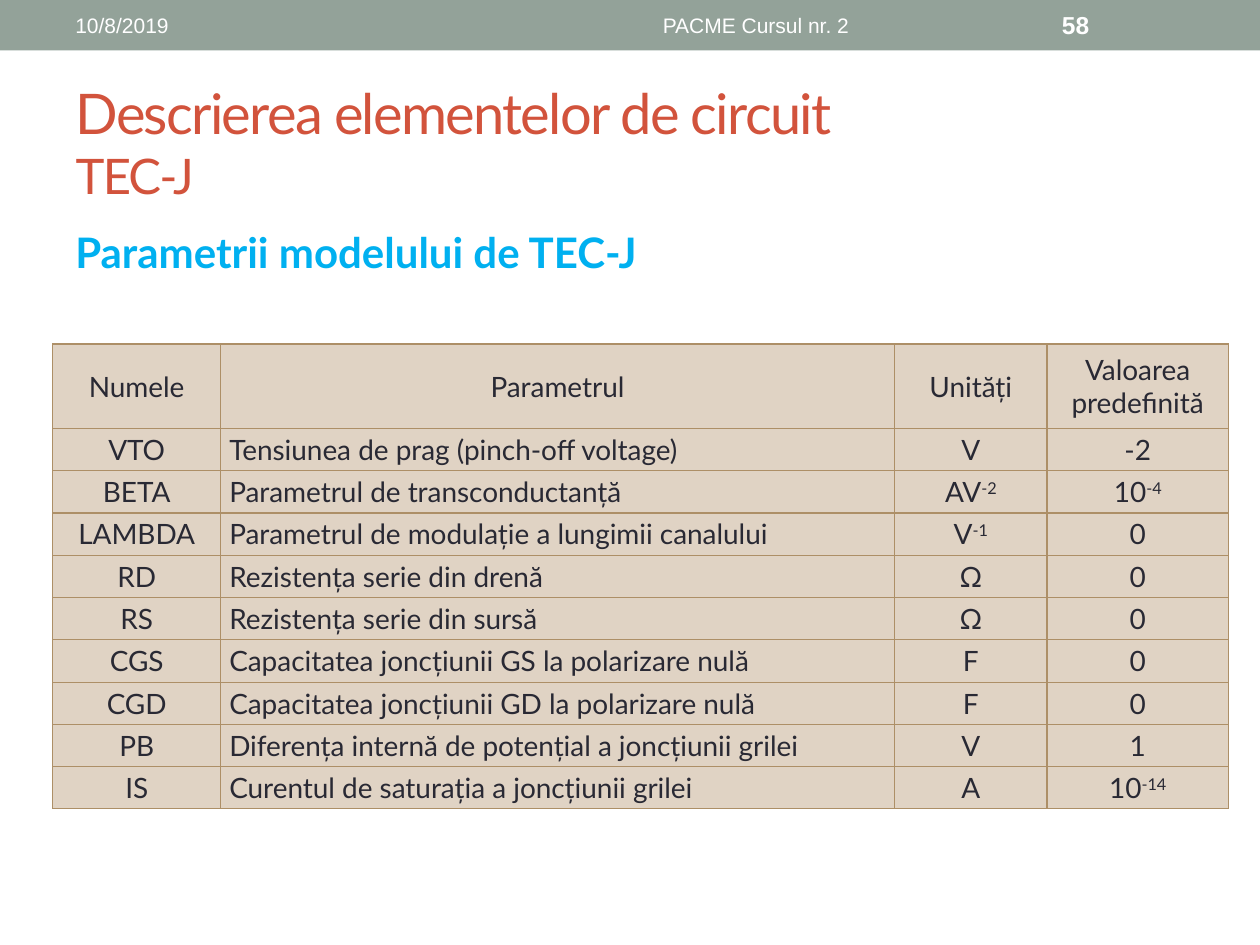
from lxml.etree import SubElement
from pptx import Presentation
from pptx.dml.color import RGBColor
from pptx.enum.shapes import MSO_SHAPE
from pptx.enum.text import MSO_ANCHOR as Anchor, MSO_AUTO_SIZE as AutoSize, PP_ALIGN as Align
from pptx.oxml.ns import qn
from pptx.util import Inches, Pt

WHITE = RGBColor(0xFF, 0xFF, 0xFF)
SAGE = RGBColor(0x93, 0xA2, 0x99)
RUST = RGBColor(0xD2, 0x53, 0x3C)
SKY = RGBColor(0x00, 0xB0, 0xF0)
INK = RGBColor(0x29, 0x29, 0x34)
SAND = RGBColor(0xE0, 0xD3, 0xC4)
BROWN = RGBColor(0xAD, 0x8F, 0x67)

BAND_TEXT = {"name": "Arial", "size": Pt(12), "color": WHITE}
PAGE_NUMBER = {**BAND_TEXT, "size": Pt(14), "bold": True}
TITLE = {"name": "Lato", "size": Pt(32), "color": RUST}
SUBTITLE = {"name": "Lato", "size": Pt(24), "color": SKY, "bold": True}
CELL_TEXT = {"name": "Lato", "size": Pt(16), "color": INK}

COLUMN_WIDTHS = (1.33, 5.35, 1.21, 1.44)
PARAMETERS = (
    ("Numele", "Parametrul", "Unități", "Valoarea predefinită"),
    ("VTO", "Tensiunea de prag (pinch-off voltage)", "V", "-2"),
    ("BETA", "Parametrul de transconductanță", "AV^-2", "10^-4"),
    ("LAMBDA", "Parametrul de modulație a lungimii canalului", "V^-1", "0"),
    ("RD", "Rezistența serie din drenă", "Ω", "0"),
    ("RS", "Rezistența serie din sursă", "Ω", "0"),
    ("CGS", "Capacitatea joncțiunii GS la polarizare nulă", "F", "0"),
    ("CGD", "Capacitatea joncțiunii GD la polarizare nulă", "F", "0"),
    ("PB", "Diferența internă de potențial a joncțiunii grilei", "V", "1"),
    ("IS", "Curentul de saturația a joncțiunii grilei", "A", "10^-14"),
)


def add_span(para, text, style, **run_attributes):
    """Append a formatted run, with optional raw run attributes."""
    span = para.add_run()
    span.text = text
    for key, value in style.items():
        if key == "color":
            span.font.color.rgb = value
        else:
            setattr(span.font, key, value)
    for key, value in run_attributes.items():
        span._r.get_or_add_rPr().set(key, value)


def add_label(page, box, text, style, align=Align.LEFT, anchor=Anchor.MIDDLE):
    """Place one line of text in the given box."""
    frame = page.shapes.add_textbox(*map(Inches, box)).text_frame
    frame.word_wrap = True
    frame.vertical_anchor = anchor
    para = frame.paragraphs[0]
    para.alignment = align
    add_span(para, text, style)


def add_band(page, box):
    """Draw the top band with date, course name and page number."""
    left, top, width, height = box
    band = page.shapes.add_shape(MSO_SHAPE.RECTANGLE, *map(Inches, box))
    band.shadow.inherit = False
    band.fill.solid()
    band.fill.fore_color.rgb = SAGE
    band.line.fill.background()
    text_top, text_height = top + 0.02, height - 0.04
    for offset, span_width, text, style, align in (
        (0.5, 3.17, "10/8/2019", BAND_TEXT, Align.LEFT),
        (3.75, 4.5, "PACME Cursul nr. 2", BAND_TEXT, Align.CENTER),
        (8.33, 1.17, "58", PAGE_NUMBER, Align.LEFT),
    ):
        label_box = (left + offset, text_top, span_width, text_height)
        add_label(page, label_box, text, style, align)


def set_title(page, box):
    """Place and fill the two-line title placeholder."""
    title = page.shapes.title
    title.left, title.top, title.width, title.height = map(Inches, box)
    frame = title.text_frame
    frame.auto_size = AutoSize.NONE
    frame.vertical_anchor = Anchor.MIDDLE
    para = frame.paragraphs[0]
    para.alignment = Align.LEFT
    add_span(para, "Descrierea elementelor de circuit", TITLE, spc="-100")
    para.add_line_break()
    add_span(para, "TEC-J", {**TITLE, "size": Pt(28)}, spc="-100")


def add_borders(cell):
    """Outline all four sides of a cell ahead of its fill."""
    properties = cell._tc.get_or_add_tcPr()
    for index, side in enumerate(("lnL", "lnR", "lnT", "lnB")):
        line = SubElement(properties, qn(f"a:{side}"), w=str(Pt(0.75)))
        properties.insert(index, line)
        fill = SubElement(line, qn("a:solidFill"))
        SubElement(fill, qn("a:srgbClr"), val=str(BROWN))


def fill_cell(cell, text, align):
    """Format a cell; text after a caret is set as superscript."""
    cell.fill.solid()
    cell.fill.fore_color.rgb = SAND
    add_borders(cell)
    cell.vertical_anchor = Anchor.MIDDLE
    cell.margin_left = cell.margin_right = Inches(0.07)
    cell.margin_top = cell.margin_bottom = 0
    para = cell.text_frame.paragraphs[0]
    para.alignment = align
    base, _, exponent = text.partition("^")
    add_span(para, base, CELL_TEXT)
    if exponent:
        add_span(para, exponent, CELL_TEXT, baseline="30000")


def add_parameter_table(page, box):
    """Build the parameter table, with a header twice as tall as a row."""
    height = Inches(box[3])
    row_count = len(PARAMETERS)
    frame = page.shapes.add_table(row_count, len(COLUMN_WIDTHS), *map(Inches, box))
    table = frame.table
    for column, width in zip(table.columns, COLUMN_WIDTHS):
        column.width = Inches(width)
    for row_index, values in enumerate(PARAMETERS):
        units = 2 if row_index == 0 else 1
        table.rows[row_index].height = height * units // (row_count + 1)
        for column_index, text in enumerate(values):
            is_description = row_index > 0 and column_index == 1
            align = Align.LEFT if is_description else Align.CENTER
            fill_cell(table.cell(row_index, column_index), text, align)


def main():
    """Create the slide and save it."""
    deck = Presentation()
    deck.slide_width, deck.slide_height = Inches(10), Inches(7.5)
    page = deck.slides.add_slide(deck.slide_layouts.get_by_name("Title Only"))
    add_band(page, (0, 0, 10, 0.4))
    set_title(page, (0.5, 0.58, 9, 1.08))
    add_label(page, (0.5, 1.75, 9, 0.58), "Parametrii modelului de TEC-J",
              SUBTITLE, anchor=Anchor.TOP)
    add_parameter_table(page, (0.42, 2.73, sum(COLUMN_WIDTHS), 3.69))
    deck.save("out.pptx")


if __name__ == "__main__":
    main()
